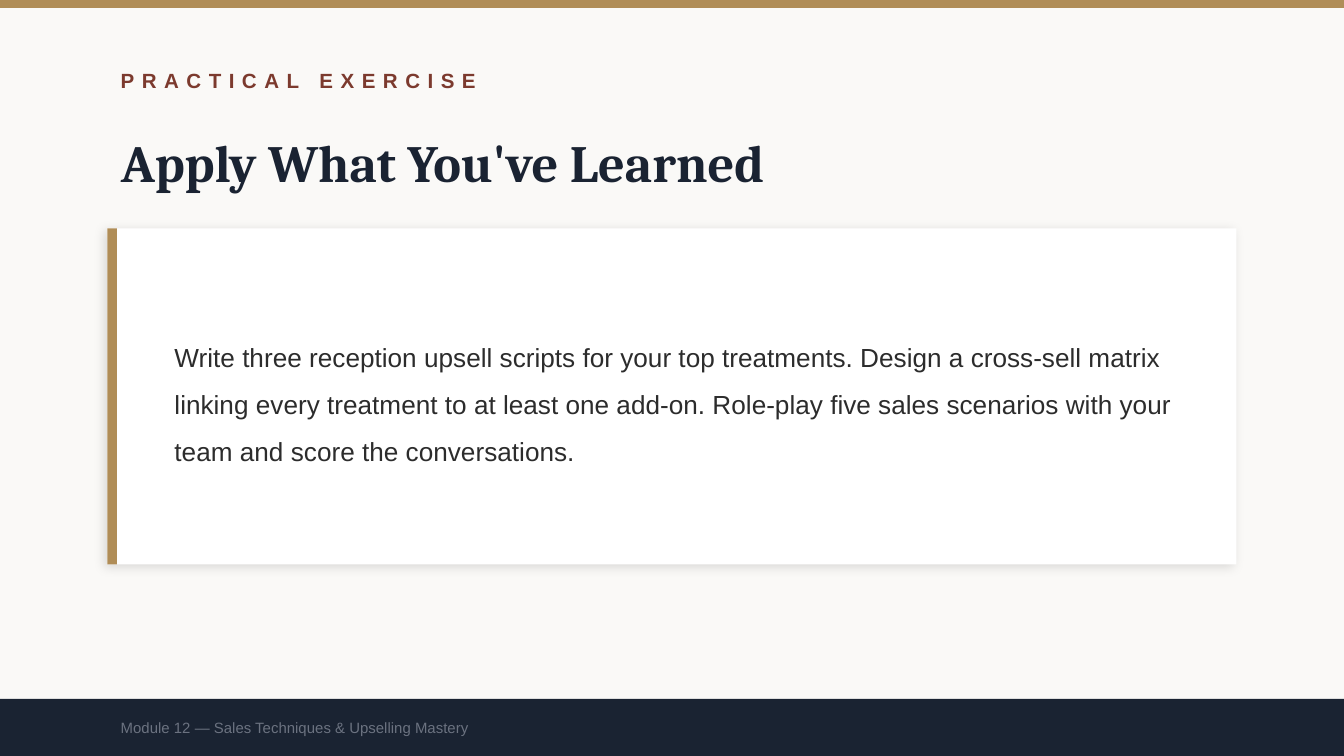
from dataclasses import dataclass

from lxml.etree import SubElement
from pptx import Presentation
from pptx.dml.color import RGBColor
from pptx.enum.shapes import MSO_SHAPE
from pptx.enum.text import MSO_ANCHOR, MSO_AUTO_SIZE, PP_ALIGN
from pptx.oxml.ns import qn
from pptx.util import Pt


@dataclass(frozen=True)
class Theme:
    """Colours, fonts and type sizes of the deck."""

    background: str = "FAF9F7"
    gold: str = "B08D57"
    rust: str = "7C3A2E"
    navy: str = "1A2332"
    white: str = "FFFFFF"
    ink: str = "2C2C2C"
    grey: str = "6B7280"
    shadow: str = "000000"
    heading_font: str = "Cambria"
    text_font: str = "Arial"
    title_size: int = 28
    body_size: int = 14
    label_size: int = 11
    footer_size: int = 8


@dataclass(frozen=True)
class Box:
    """A rectangle measured in points."""

    left: float
    top: float
    width: float
    height: float

    def place(self, shape):
        """Move and size a shape to fill this box."""
        shape.left, shape.top = Pt(self.left), Pt(self.top)
        shape.width, shape.height = Pt(self.width), Pt(self.height)


THEME = Theme()


def add_rectangle(slide, box, color):
    """Add a flat filled rectangle."""
    shape = slide.shapes.add_shape(MSO_SHAPE.RECTANGLE, 0, 0, 0, 0)
    box.place(shape)
    shape.shadow.inherit = False
    shape.fill.solid()
    shape.fill.fore_color.rgb = RGBColor.from_string(color)
    shape.line.fill.background()
    return shape


def add_soft_shadow(shape):
    """Give a shape a faint shadow falling down and to the left."""
    effects = shape._element.spPr.find(qn("a:effectLst"))
    shadow = SubElement(effects, qn("a:outerShdw"), blurRad=str(Pt(6)),
                        dist=str(Pt(2)), dir=str(135 * 60000),
                        algn="bl", rotWithShape="0")
    color = SubElement(shadow, qn("a:srgbClr"), val=THEME.shadow)
    SubElement(color, qn("a:alpha"), val="12000")


def write_text(slide, box, text, *, size, color, font=THEME.text_font,
               bold=False, tracking=0, line_spacing=None, shape=None):
    """Write one formatted paragraph in a given shape or a new text box."""
    shape = shape or slide.shapes.add_textbox(0, 0, 0, 0)
    box.place(shape)
    frame = shape.text_frame
    frame.word_wrap = True
    frame.auto_size = MSO_AUTO_SIZE.NONE
    frame.vertical_anchor = MSO_ANCHOR.MIDDLE
    paragraph = frame.paragraphs[0]
    paragraph.alignment = PP_ALIGN.LEFT
    if line_spacing:
        paragraph.line_spacing = line_spacing
    run = paragraph.add_run()
    run.text = text
    run.font.name = font
    run.font.size = Pt(size)
    run.font.bold = bold
    run.font.color.rgb = RGBColor.from_string(color)
    if tracking:
        run._r.get_or_add_rPr().set("spc", str(tracking * 100))


def add_header(slide, box, label, title):
    """Place the spaced label above the slide title."""
    write_text(slide, Box(box.left, box.top, box.width, 28.8), label,
               size=THEME.label_size, color=THEME.rust, bold=True, tracking=4)
    write_text(slide, Box(box.left, box.top + 36, box.width, 43.2), title,
               size=THEME.title_size, color=THEME.navy,
               font=THEME.heading_font, bold=True, shape=slide.shapes.title)


def add_exercise_card(slide, box, text):
    """Place a white card with a gold edge and the exercise text."""
    add_soft_shadow(add_rectangle(slide, box, THEME.white))
    add_rectangle(slide, Box(box.left, box.top, 5.04, box.height), THEME.gold)
    inner = Box(box.left + 28.8, box.top + 14.4,
                box.width - 50.4, box.height - 28.8)
    write_text(slide, inner, text, size=THEME.body_size, color=THEME.ink,
               line_spacing=1.5)


def add_footer(slide, box, margin, text):
    """Place the dark footer band and its module name."""
    add_rectangle(slide, box, THEME.navy)
    write_text(slide, Box(box.left + margin, box.top, 576, box.height), text,
               size=THEME.footer_size, color=THEME.grey)


def build_exercise_slide(presentation, box):
    """Build the practical exercise slide inside the given box."""
    slide = presentation.slides.add_slide(presentation.slide_layouts[5])
    slide.background.fill.solid()
    slide.background.fill.fore_color.rgb = RGBColor.from_string(THEME.background)
    margin = 57.6
    left = box.left + margin
    add_rectangle(slide, Box(box.left, box.top, box.width, 4.32), THEME.gold)
    add_header(slide, Box(left, box.top + 28.8, 576, 79.2),
               "PRACTICAL EXERCISE", "Apply What You've Learned")
    add_exercise_card(
        slide, Box(left, box.top + 122.4, box.width - 2 * margin, 180),
        "Write three reception upsell scripts for your top treatments. "
        "Design a cross-sell matrix linking every treatment to at least one "
        "add-on. Role-play five sales scenarios with your team and score the "
        "conversations.")
    footer_height = 30.6
    add_footer(slide, Box(box.left, box.top + box.height - footer_height,
                          box.width, footer_height),
               margin, "Module 12 — Sales Techniques & Upselling Mastery")


def main():
    """Create and save the presentation."""
    page = Box(0, 0, 720, 405)
    presentation = Presentation()
    presentation.slide_width = Pt(page.width)
    presentation.slide_height = Pt(page.height)
    build_exercise_slide(presentation, page)
    presentation.save("out.pptx")


if __name__ == "__main__":
    main()
